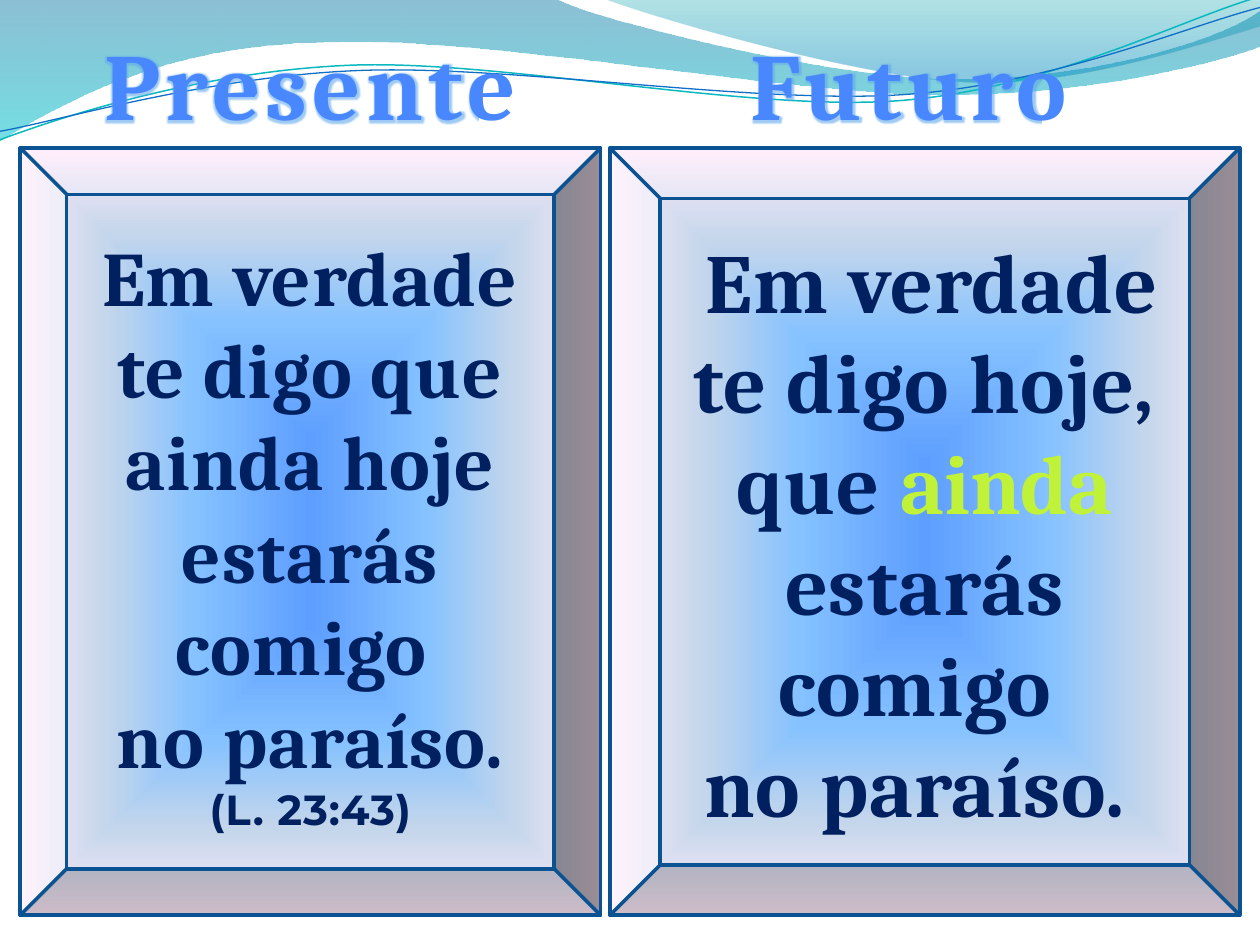
from lxml.etree import SubElement as Sub
from pptx import Presentation as Deck
from pptx.dml.color import RGBColor as Rgb
from pptx.enum.shapes import MSO_SHAPE as Kind
from pptx.enum.text import MSO_ANCHOR as Anchor, MSO_AUTO_SIZE as Auto, PP_ALIGN as Align
from pptx.oxml.ns import qn
from pptx.util import Pt

NAVY = Rgb(0x00, 0x20, 0x60)
EDGE = Rgb(0x0B, 0x52, 0x92)
TEAL = Rgb(0x0A, 0xB8, 0xBF)
BLUE = Rgb(0x0F, 0x6F, 0xC6)
WHITE = Rgb(0xFF, 0xFF, 0xFF)
PALE = Rgb(0xF4, 0xF5, 0xFA)
HALO = Rgb(0x5E, 0xA8, 0xEC)

DEEP = [(0, Rgb(0x00, 0x74, 0xA1), 45), (100, Rgb(0x00, 0xC6, 0xCF), 55)]
LIGHT = [(0, Rgb(0x00, 0xA1, 0xA9), 30), (80, Rgb(0x00, 0x8B, 0xBF), 45)]
GLASS = [(0, Rgb(0x5E, 0x9E, 0xFF), 100), (40, Rgb(0x85, 0xC2, 0xFF), 100),
         (70, Rgb(0xC4, 0xD6, 0xEB), 100), (100, Rgb(0xFF, 0xEB, 0xFA), 100)]
LIME = [(0, Rgb(0x62, 0x7E, 0x06), 100), (78, Rgb(0xBF, 0xF2, 0x38), 100),
        (100, Rgb(0xF8, 0xFE, 0xED), 100)]
SKY = [(10, Rgb(0x49, 0x87, 0xFF), 100), (75, Rgb(0x00, 0x53, 0x9E), 100)]

BANDS = [
    (DEEP, [(0, -1), (317, -1), (343, 12, 478, 45, 546, 45),
            (614, 45, 690, 27, 720, 6), (721, 26),
            (708, 32, 626, 55, 537, 54), (448, 54, 275, 20, 185, 24),
            (93, 25, 33, 60, -1, 81)]),
    (LIGHT, [(345, -1), (367, 8, 491, 45, 554, 47),
             (616, 50, 692, 23, 720, 15), (720, 0)]),
]
LINES = [
    (TEAL, 0.85, [(-1.4, 62.9), (33.8, 51.6, 114.1, 29.4, 199.8, 29.8),
                  (284.9, 30.2, 425.9, 67.2, 512.5, 64.8),
                  (599.1, 62.4, 676.5, 25.7, 720.2, 15.5)]),
    (BLUE, 0.75, [(-1.1, 58), (32.9, 53.7, 118.3, 32.5, 204.1, 33),
                  (290.6, 33.4, 428.9, 63.1, 515.5, 61.4),
                  (601.3, 59.6, 678.5, 30.1, 721.4, 21.3)]),
]
TILT = 357.3

BODY = dict(size=Pt(44), name="Cambria", bold=True)
BIG = dict(BODY, size=Pt(48))
HEAD = dict(BODY, size=Pt(54))
TOP, TALL = 84.5, 438.5
LEFT, RIGHT = (11.5, 331.75), (348.5, 360)


def tint(node, color, alpha=100):
    part = Sub(node, qn("a:srgbClr"), val=str(color))
    if alpha < 100:
        Sub(part, qn("a:alpha"), val=str(alpha * 1000))


def blend(fill, node, stops, round_box=False):
    fill.gradient()
    grad = node.find(qn("a:gradFill"))
    for child in list(grad):
        grad.remove(child)
    group = Sub(grad, qn("a:gsLst"))
    for pos, color, alpha in stops:
        tint(Sub(group, qn("a:gs"), pos=str(pos * 1000)), color, alpha)
    if round_box:
        way = Sub(grad, qn("a:path"), {"path": "shape"})
        Sub(way, qn("a:fillToRect"), dict.fromkeys("ltrb", "50000"))
    else:
        Sub(grad, qn("a:lin"), ang="5400000", scaled="1")


def bend(shape, steps):
    legs = iter(list(shape.element.iter(qn("a:lnTo"))))
    for step in steps:
        leg = next(legs)
        if len(step) == 6:
            leg.tag = qn("a:cubicBezTo")
            for _ in range(2):
                extra = next(legs)
                leg.append(extra[0])
                extra.getparent().remove(extra)


def wave(slide, steps, close):
    spots = [(Pt(x), Pt(y)) for step in steps
             for x, y in zip(step[::2], step[1::2])]
    pen = slide.shapes.build_freeform(*spots[0])
    pen.add_line_segments(spots[1:], close=close)
    shape = pen.convert_to_shape()
    bend(shape, steps[1:])
    shape.shadow.inherit = False
    return shape


def band(slide, stops, steps):
    shape = wave(slide, steps, True)
    blend(shape.fill, shape.element.spPr, stops)
    shape.line.fill.background()


def thread(slide, color, width, steps):
    shape = wave(slide, steps, False)
    shape.rotation = TILT
    shape.fill.background()
    shape.line.color.rgb = color
    shape.line.width = Pt(width)


def write(par, text, form, stops=None, rim=(WHITE, 0.9), space=0.5, glow=False):
    run = par.add_run()
    run.text = text
    font = run.font
    node = run._r.get_or_add_rPr()
    node.set("spc", str(int(space * 100)))
    color, width = rim
    tint(Sub(Sub(node, qn("a:ln"), w=str(Pt(width))), qn("a:solidFill")), color)
    if stops:
        blend(font.fill, node, stops)
    else:
        font.color.rgb = NAVY
    if glow:
        halo = Sub(Sub(node, qn("a:effectLst")), qn("a:glow"), rad=str(Pt(3)))
        tint(halo, HALO, 60)
    for key, val in form.items():
        setattr(font, key, val)


def panel(slide, place, rows):
    x, wide = place
    shape = slide.shapes.add_shape(Kind.BEVEL, Pt(x), Pt(TOP), Pt(wide), Pt(TALL))
    shape.adjustments[0] = 0.08
    shape.shadow.inherit = False
    blend(shape.fill, shape.element.spPr, GLASS, True)
    shape.line.color.rgb = EDGE
    shape.line.width = Pt(2)
    frame = shape.text_frame
    frame.word_wrap = True
    frame.vertical_anchor = Anchor.MIDDLE
    for i, row in enumerate(rows):
        par = frame.add_paragraph() if i else frame.paragraphs[0]
        par.alignment = Align.CENTER
        for text, form, *more in row:
            write(par, text, form, **(more[0] if more else {}))


def title(slide, text, x, wide, align, wrap):
    box = slide.shapes.add_textbox(Pt(x), Pt(11.5), Pt(wide), Pt(72.7))
    frame = box.text_frame
    frame.word_wrap = wrap
    frame.auto_size = Auto.SHAPE_TO_FIT_TEXT
    par = frame.paragraphs[0]
    par.alignment = align
    write(par, text, HEAD, SKY, (PALE, 0.9), 3, True)


def main():
    deck = Deck()
    deck.slide_width, deck.slide_height = Pt(720), Pt(540)
    slide = deck.slides.add_slide(deck.slide_layouts[6])
    for item in BANDS:
        band(slide, *item)
    for item in LINES:
        thread(slide, *item)
    panel(slide, LEFT, [
        [("Em verdade te digo que ainda hoje", BODY)],
        [("estarás comigo ", BODY)],
        [("no paraíso.", BODY)],
        [("(L. 23:43)", dict(BODY, size=Pt(24), name="Montserrat"))],
    ])
    panel(slide, RIGHT, [
        [(" ", dict(BODY, size=Pt(36))), ("Em verdade te digo hoje, que ", BIG),
         ("ainda", BIG, dict(stops=LIME, rim=(WHITE, 1.5), space=0))],
        [("estarás comigo ", BIG)],
        [("no paraíso. ", BIG)],
    ])
    title(slide, "Presente", *LEFT, Align.CENTER, True)
    title(slide, "Futuro", 422, 208, Align.LEFT, False)
    deck.save("out.pptx")


if __name__ == "__main__":
    main()
